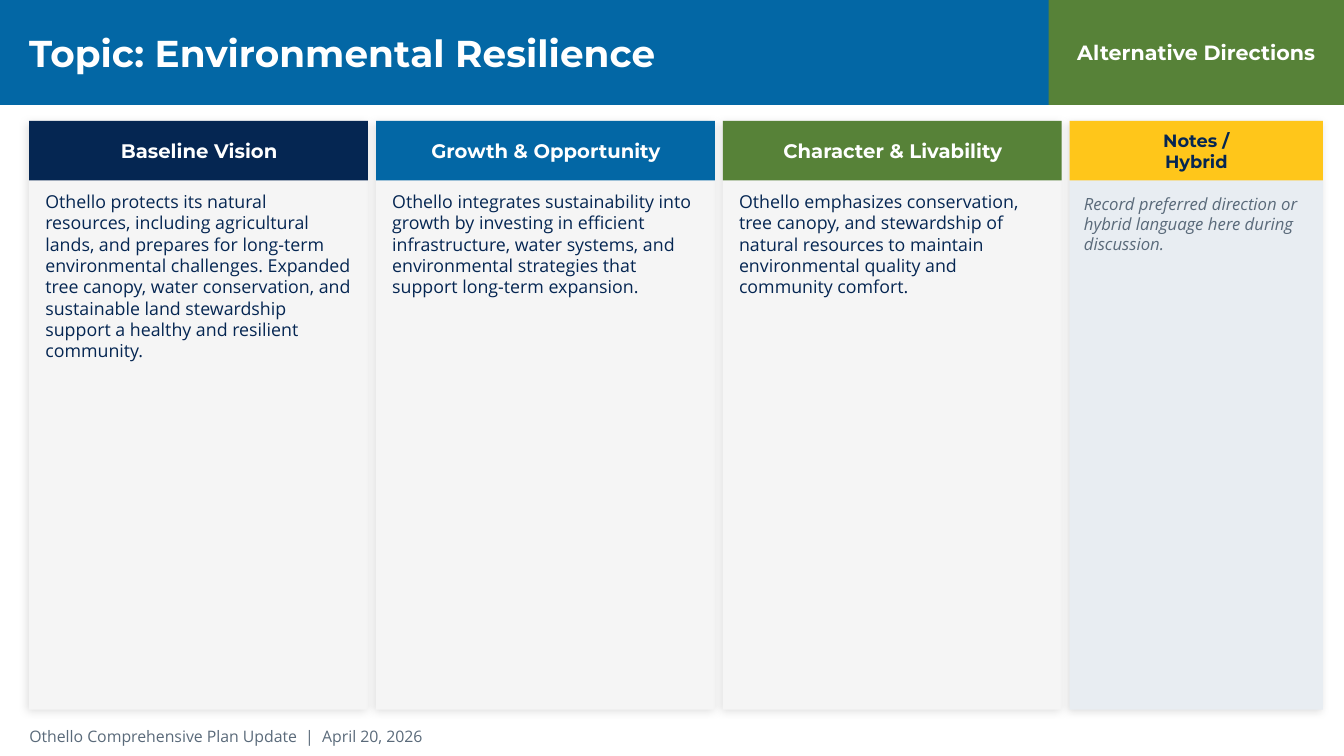
from dataclasses import dataclass

from lxml.etree import SubElement
from pptx import Presentation
from pptx.dml.color import RGBColor
from pptx.enum.shapes import MSO_SHAPE
from pptx.enum.text import MSO_ANCHOR, PP_ALIGN
from pptx.oxml.ns import qn
from pptx.util import Inches, Pt


@dataclass(frozen=True)
class Theme:
    navy: str = "052652"
    blue: str = "0367A5"
    green: str = "578238"
    gold: str = "FFC61A"
    white: str = "FFFFFF"
    slate: str = "5A6A7A"
    pale_gray: str = "F5F5F5"
    pale_blue: str = "E8EDF2"
    heading_font: str = "Montserrat"
    body_font: str = "Open Sans"
    title_size: float = 26.7
    badge_size: float = 14.7
    header_size: float = 14
    body_size: float = 12.7
    hint_size: float = 12
    footer_size: float = 11.3


THEME = Theme()

SLIDE_WIDTH = 13.33
BANNER_HEIGHT = 1.04
BADGE_LEFT = 10.4
MARGIN = 0.29
CARD_TOP = 1.2
CARD_HEIGHT = 5.84
HEADER_HEIGHT = 0.59
CARD_WIDTH = 3.36
HYBRID_WIDTH = 2.51
CARD_GAP = 0.08

DIRECTIONS = [
    ("Baseline Vision", THEME.navy,
     "Othello protects its natural resources, including agricultural lands, "
     "and prepares for long-term environmental challenges. Expanded tree canopy, "
     "water conservation, and sustainable land stewardship support a healthy "
     "and resilient community."),
    ("Growth & Opportunity", THEME.blue,
     "Othello integrates sustainability into growth by investing in efficient "
     "infrastructure, water systems, and environmental strategies that support "
     "long-term expansion."),
    ("Character & Livability", THEME.green,
     "Othello emphasizes conservation, tree canopy, and stewardship of natural "
     "resources to maintain environmental quality and community comfort."),
]


def add_block(slide, left, top, width, height, color):
    block = slide.shapes.add_shape(
        MSO_SHAPE.RECTANGLE, Inches(left), Inches(top), Inches(width), Inches(height))
    block.shadow.inherit = False
    block.fill.solid()
    block.fill.fore_color.rgb = RGBColor.from_string(color)
    block.line.fill.background()
    return block


def add_soft_shadow(shape):
    """Give the shape a faint blurred shadow towards the lower left."""
    effects = shape._element.spPr.find(qn("a:effectLst"))
    shadow = SubElement(effects, qn("a:outerShdw"), blurRad=str(Pt(6)),
                        dist=str(Pt(2)), dir=str(135 * 60000),
                        algn="bl", rotWithShape="0")
    color = SubElement(shadow, qn("a:srgbClr"), val="000000")
    SubElement(color, qn("a:alpha"), val="13000")


def add_text(slide, left, top, width, height, text, size, color, *,
             heading=False, centered=False, italic=False, anchor=MSO_ANCHOR.MIDDLE):
    box = slide.shapes.add_textbox(
        Inches(left), Inches(top), Inches(width), Inches(height))
    frame = box.text_frame
    frame.word_wrap = True
    frame.vertical_anchor = anchor
    frame.margin_left = frame.margin_right = Inches(0)
    frame.margin_top = frame.margin_bottom = Inches(0)
    frame.text = text
    for paragraph in frame.paragraphs:
        paragraph.alignment = PP_ALIGN.CENTER if centered else PP_ALIGN.LEFT
        for run in paragraph.runs:
            run.font.name = THEME.heading_font if heading else THEME.body_font
            run.font.size = Pt(size)
            run.font.bold = heading
            run.font.italic = italic
            run.font.color.rgb = RGBColor.from_string(color)


def add_card(slide, left, width, card_color, header_color):
    card = add_block(slide, left, CARD_TOP, width, CARD_HEIGHT, card_color)
    add_soft_shadow(card)
    add_block(slide, left, CARD_TOP, width, HEADER_HEIGHT, header_color)


def add_direction_card(slide, left, header, header_color, body):
    add_card(slide, left, CARD_WIDTH, THEME.pale_gray, header_color)
    add_text(slide, left + 0.14, CARD_TOP, 3.09, HEADER_HEIGHT, header,
             THEME.header_size, THEME.white, heading=True, centered=True)
    add_text(slide, left + 0.16, 1.89, 3.04, 5.01, body,
             THEME.body_size, THEME.navy, anchor=MSO_ANCHOR.TOP)


def add_hybrid_card(slide, left):
    add_card(slide, left, HYBRID_WIDTH, THEME.pale_blue, THEME.gold)
    add_text(slide, left + 0.11, CARD_TOP, 2.29, HEADER_HEIGHT, "Notes /\nHybrid",
             THEME.body_size, THEME.navy, heading=True, centered=True)
    add_text(slide, left + 0.14, 1.92, 2.24, 4.99,
             "Record preferred direction or hybrid language here during discussion.",
             THEME.hint_size, THEME.slate, italic=True, anchor=MSO_ANCHOR.TOP)


def add_banner(slide):
    badge_width = SLIDE_WIDTH - BADGE_LEFT
    add_block(slide, 0, 0, SLIDE_WIDTH, BANNER_HEIGHT, THEME.blue)
    add_text(slide, MARGIN, 0, 10, BANNER_HEIGHT, "Topic: Environmental Resilience",
             THEME.title_size, THEME.white, heading=True)
    add_block(slide, BADGE_LEFT, 0, badge_width, BANNER_HEIGHT, THEME.green)
    add_text(slide, BADGE_LEFT, 0, badge_width, BANNER_HEIGHT, "Alternative Directions",
             THEME.badge_size, THEME.white, heading=True, centered=True)


def main():
    presentation = Presentation()
    presentation.slide_width = Inches(SLIDE_WIDTH)
    presentation.slide_height = Inches(7.5)
    slide = presentation.slides.add_slide(presentation.slide_layouts[6])

    add_banner(slide)
    add_text(slide, MARGIN, 7.17, 12.75, 0.27,
             "Othello Comprehensive Plan Update  |  April 20, 2026",
             THEME.footer_size, THEME.slate)

    card_step = CARD_WIDTH + CARD_GAP
    for index, (header, header_color, body) in enumerate(DIRECTIONS):
        add_direction_card(slide, MARGIN + index * card_step, header, header_color, body)
    add_hybrid_card(slide, MARGIN + len(DIRECTIONS) * card_step)

    presentation.save("out.pptx")


if __name__ == "__main__":
    main()
